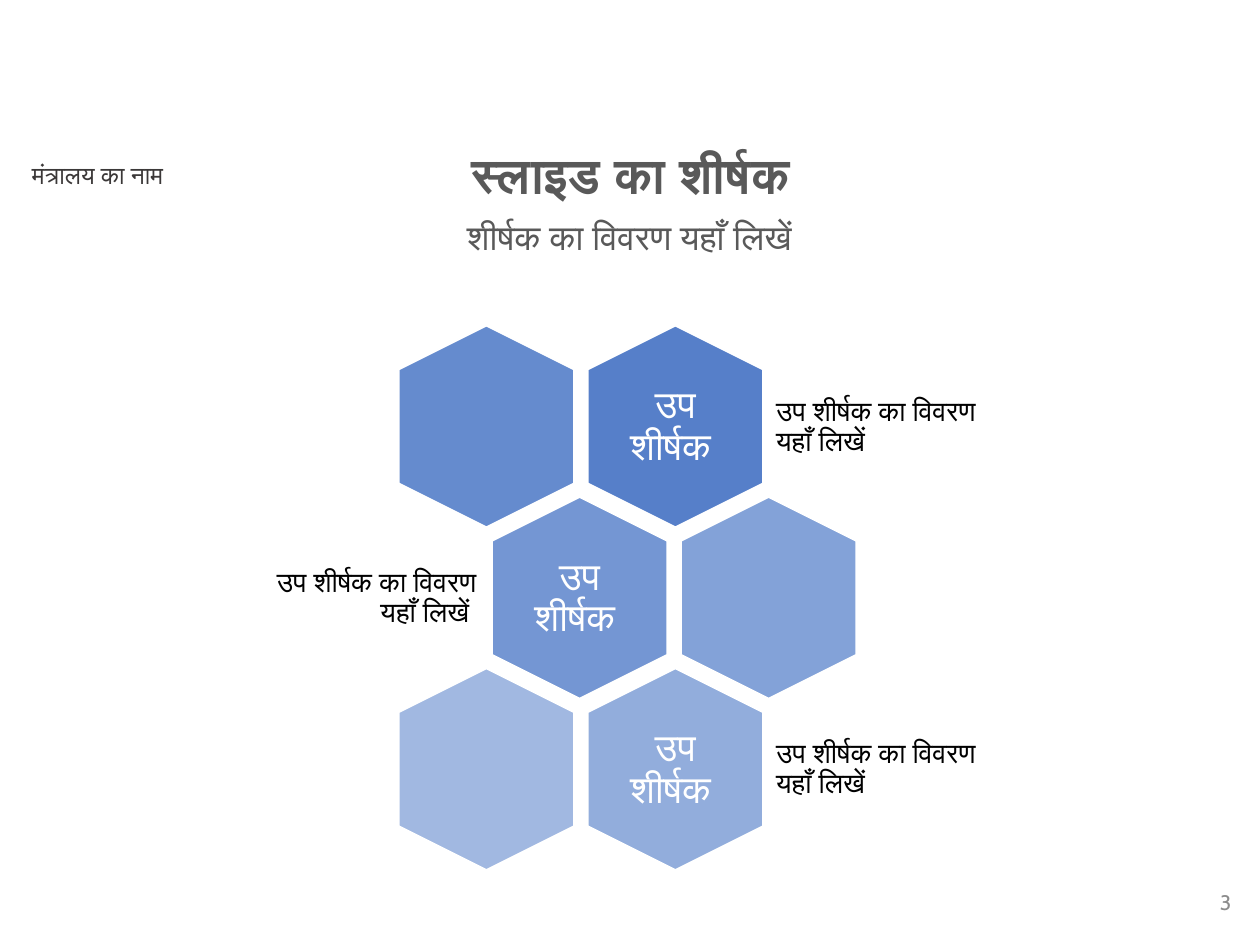
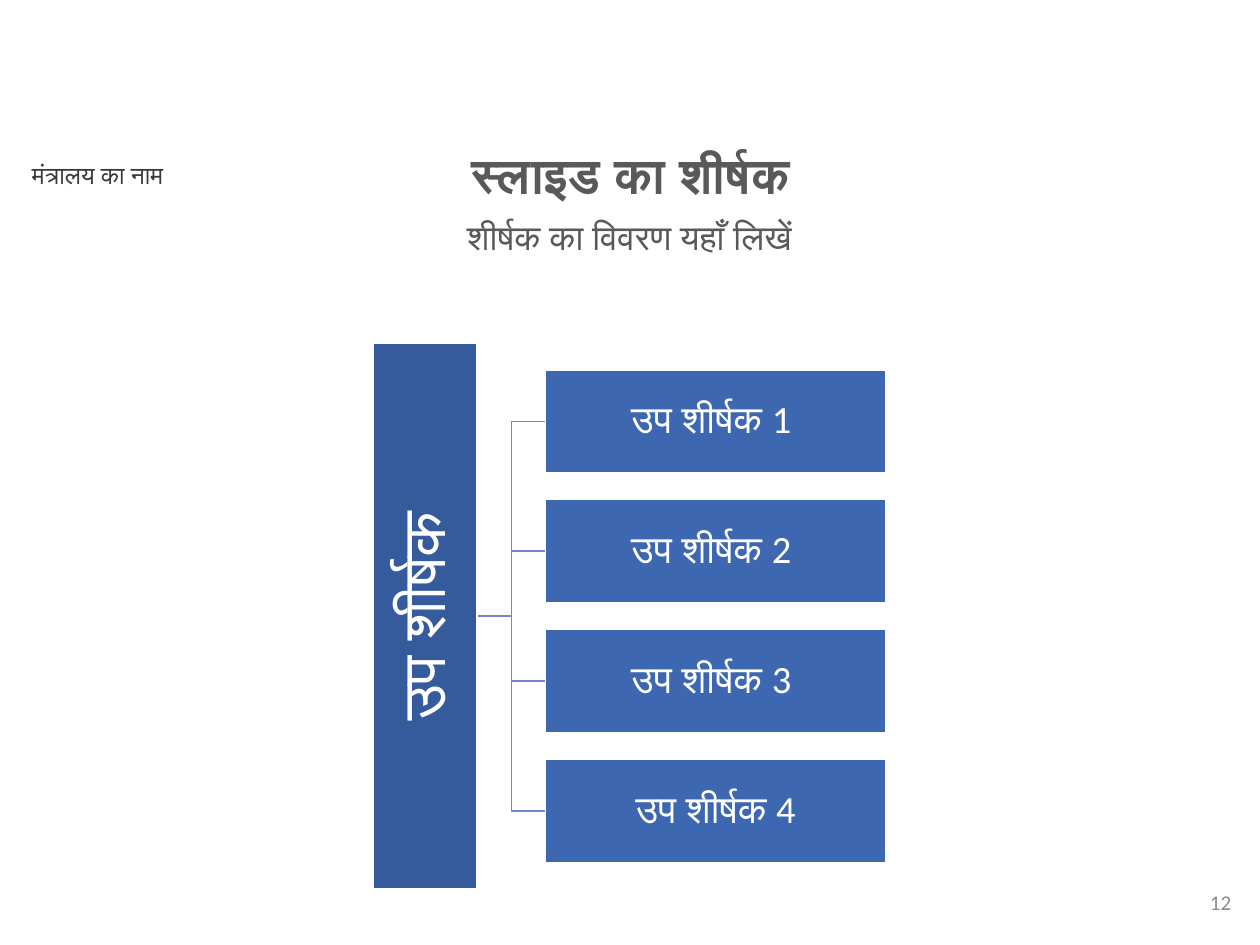
"""Builds two Hindi template slides: a honeycomb of subtitles and a bracket tree."""
from dataclasses import dataclass

from lxml import etree
from pptx import Presentation
from pptx.dml.color import RGBColor
from pptx.enum.shapes import MSO_SHAPE
from pptx.enum.text import MSO_ANCHOR, PP_ALIGN
from pptx.oxml.ns import qn
from pptx.util import Inches, Pt

HEX, RECT = MSO_SHAPE.HEXAGON, MSO_SHAPE.RECTANGLE
LEFT, MID, RIGHT = PP_ALIGN.LEFT, PP_ALIGN.CENTER, PP_ALIGN.RIGHT
TOP, CENTRE = MSO_ANCHOR.TOP, MSO_ANCHOR.MIDDLE


@dataclass(frozen=True)
class Theme:
    font: str = "Calibri"
    alt: str = "Cabin"
    white: str = "FFFFFF"
    black: str = "000000"
    title: str = "595959"
    office: str = "3B3838"
    page: str = "8C8C8C"
    cell: str = "4472C4"
    spine: str = "365B9D"
    branch: str = "3E67B2"
    link: str = "6D89CB"
    big: int = 35
    head: int = 28
    label: int = 22
    sub: int = 20
    note: int = 16
    small: int = 14
    foot: int = 12


class Deck:
    def __init__(self, theme):
        self.theme = theme
        self.prs = Presentation()
        self.prs.slide_width = Inches(10)
        self.prs.slide_height = Inches(7.5)
        self.slide = None

    def page(self, number, font):
        t = self.theme
        self.slide = self.prs.slides.add_slide(self.prs.slide_layouts[6])
        self.text("मंत्रालय का नाम", (-0.04, 1.22, 1.63, 0.34), t.small, t.office)
        self.text(number, (7.62, 6.96, 2.25, 0.4), t.foot, t.page,
                  align=RIGHT, anchor=CENTRE, font=font)
        self.text("शीर्षक का विवरण यहाँ लिखें", (1.46, 1.7, 7.07, 0.63),
                  t.sub, t.title, lead=0.9)
        self.text("स्लाइड का शीर्षक", (1.86, 1.15, 6.29, 0.47),
                  t.head, t.title, lead=0.9, bold=True)

    def letter(self, shape, words, size, color, align=MID, anchor=TOP,
               inset=None, lead=None, bold=False, font=None):
        frame = shape.text_frame
        frame.text = words
        frame.word_wrap = True
        frame.vertical_anchor = anchor
        if inset is not None:
            frame.margin_left = frame.margin_right = Inches(inset)
            frame.margin_top = frame.margin_bottom = Inches(inset)
        para = frame.paragraphs[0]
        para.alignment = align
        if lead:
            para.line_spacing = lead
        face = para.runs[0].font
        face.name = font or self.theme.font
        face.size = Pt(size)
        face.bold = bold
        face.color.rgb = RGBColor.from_string(color)

    def text(self, words, area, size, color, **style):
        box = self.slide.shapes.add_textbox(*map(Inches, area))
        self.letter(box, words, size, color, **style)

    def block(self, kind, area, color, turn=0):
        shape = self.slide.shapes.add_shape(kind, *map(Inches, area))
        shape.shadow.inherit = False
        shape.rotation = turn
        shape.fill.solid()
        shape.fill.fore_color.rgb = RGBColor.from_string(color)
        shape.line.color.rgb = RGBColor.from_string(self.theme.white)
        shape.line.width = Pt(1)
        return shape

    def cell(self, area, alpha):
        shape = self.block(HEX, area, self.theme.cell, 90)
        shape.adjustments[0] = 0.25
        tint = shape._element.spPr.find(qn("a:solidFill"))[0]
        etree.SubElement(tint, qn("a:alpha"), val=str(alpha * 1000))

    def bar(self, words, area, color, size, turn=0):
        shape = self.block(RECT, area, color, turn)
        self.letter(shape, words, size, self.theme.white, anchor=CENTRE,
                    inset=0.02, lead=0.9)

    def link(self, start, end):
        x, y = map(Inches, start)
        right, foot = map(Inches, end)
        bend = (x + right) // 2
        pen = self.slide.shapes.build_freeform(x, y)
        pen.add_line_segments([(bend, y), (bend, foot), (right, foot)], close=False)
        line = pen.convert_to_shape()
        line.shadow.inherit = False
        line.fill.background()
        line.line.color.rgb = RGBColor.from_string(self.theme.link)
        line.line.width = Pt(1)


def comb(deck):
    t = deck.theme
    deck.page("3", t.alt)
    wide, high = 1.6, 1.39
    for i in range(6):
        row, side = divmod(i, 2)
        odd = row % 2
        col = (row + 1 + side) % 2
        x = 3.06 + 1.5 * col + 0.74 * odd
        y = 4.05 + 1.36 * (row - 1)
        deck.cell((x, y, wide, high), 90 - 8 * i)
        if side:
            continue
        deck.text("उप शीर्षक ", (x + 0.32, y + 0.15, 0.96, 1.1), t.label,
                  t.white, anchor=CENTRE, inset=0.09, lead=0.9)
        words = "उप शीर्षक का विवरण यहाँ लिखें" + " " * odd
        area = (2.12, y + 0.22, 1.73, 0.96) if odd else (6.09, y + 0.22, 1.78, 0.96)
        deck.text(words, area, t.note, t.black, align=RIGHT if odd else LEFT,
                  anchor=CENTRE, inset=0.07, lead=0.9)


def tree(deck):
    t = deck.theme
    deck.page("12", t.font)
    mid, thick, left = 4.89, 0.82, 4.33
    names = ["उप शीर्षक 1 ", "उप शीर्षक 2 ", "उप शीर्षक 3 ", "उप शीर्षक 4"]
    rows = [mid + 1.03 * (i - 1.5) for i in range(len(names))]
    for y in reversed(rows):
        deck.link((3.79, mid), (left, y))
    deck.bar("उप शीर्षक", (1.21, mid - thick / 2, 4.33, thick), t.spine, t.big, 270)
    for name, y in zip(names, rows):
        deck.bar(name, (left, y - thick / 2, 2.7, thick), t.branch, t.label)


def main():
    deck = Deck(Theme())
    comb(deck)
    tree(deck)
    deck.prs.save("out.pptx")


if __name__ == "__main__":
    main()
